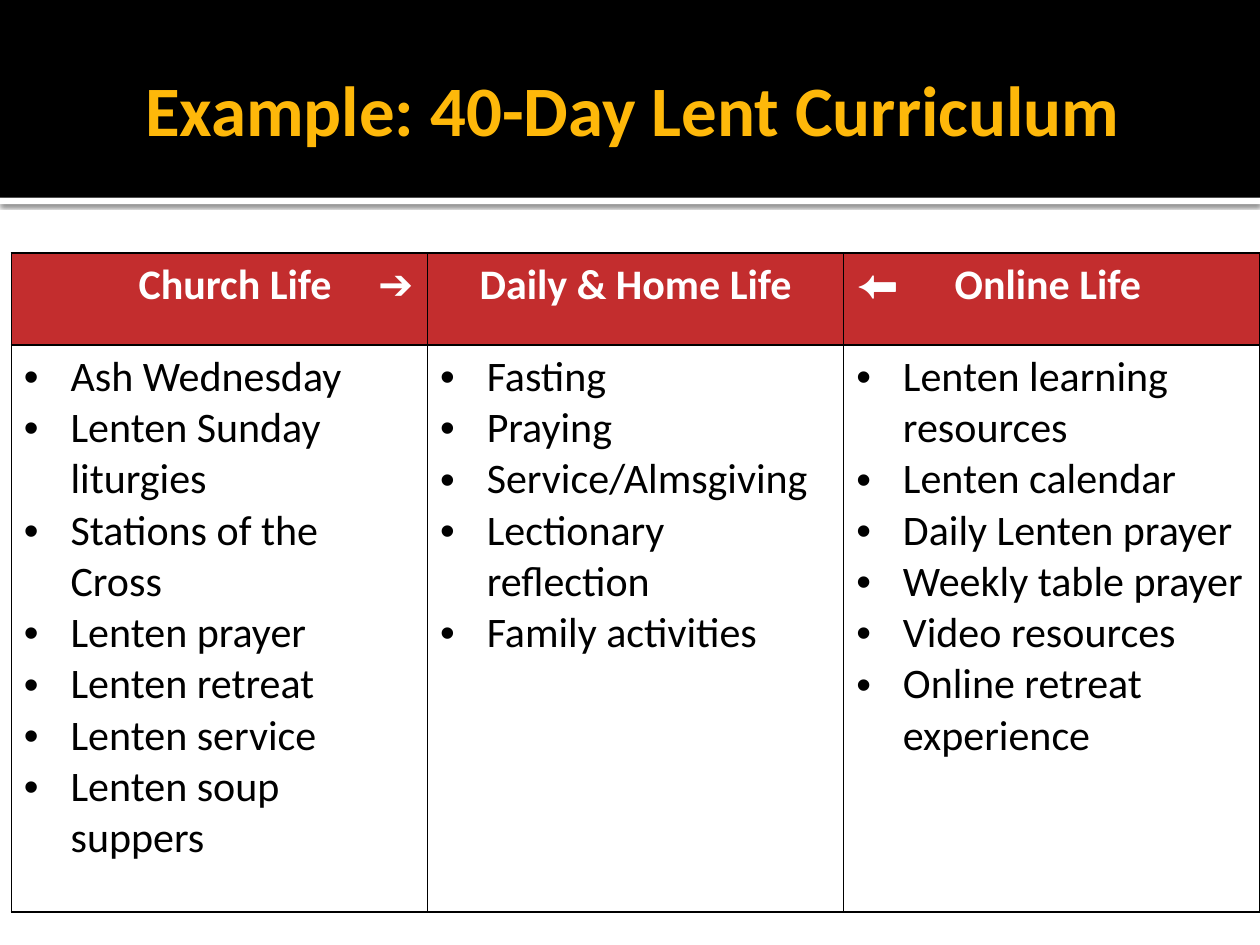
from lxml.etree import SubElement
from pptx import Presentation
from pptx.dml.color import RGBColor
from pptx.enum.shapes import MSO_SHAPE as Shape
from pptx.enum.text import MSO_ANCHOR as Anchor, PP_ALIGN as Align
from pptx.oxml import parse_xml
from pptx.oxml.ns import nsdecls, qn
from pptx.util import Inches, Pt

COLORS = {
    "black": "000000",
    "white": "FFFFFF",
    "gold": "FEB80A",
    "red": "C32D2E",
}
HEADERS = [
    ("\tChurch Life\t➔", Align.LEFT, (0.91, 2.81)),
    ("Daily & Home Life", Align.CENTER, ()),
    ("⬅\tOnline Life", Align.LEFT, (0.78,)),
]
ACTIVITIES = [
    ["Ash Wednesday", "Lenten Sunday liturgies", "Stations of the Cross",
     "Lenten prayer", "Lenten retreat", "Lenten service", "Lenten soup suppers"],
    ["Fasting", "Praying", "Service/Almsgiving", "Lectionary reflection",
     "Family activities"],
    ["Lenten learning resources", "Lenten calendar", "Daily Lenten prayer",
     "Weekly table prayer", "Video resources", "Online retreat experience"],
]


class SlideBuilder:
    font = "Calibri"
    body_size = 24
    title_size = 40.5
    indent = 0.37

    def __init__(self, deck):
        self.slide = deck.slides.add_slide(deck.slide_layouts[5])

    def color(self, name):
        return RGBColor.from_string(COLORS[name])

    def style(self, para, size, color, bold=False):
        font = para.font
        font.name, font.size, font.bold = self.font, Pt(size), bold
        font.color.rgb = self.color(color)

    def bar(self, top, height, color, shadow=False):
        box = self.slide.shapes.add_shape(
            Shape.RECTANGLE, 0, Inches(top), Inches(10), Inches(height))
        box.shadow.inherit = False
        box.fill.solid()
        box.fill.fore_color.rgb = self.color(color)
        box.line.fill.background()
        if shadow:
            effects = box.element.spPr.find(qn("a:effectLst"))
            effects.append(parse_xml(
                f'<a:outerShdw {nsdecls("a")} blurRad="{Pt(2.5)}" '
                f'dist="{Pt(0.8)}" dir="5400000" algn="t" rotWithShape="0">'
                f'<a:srgbClr val="{COLORS["black"]}"><a:alpha val="60000"/>'
                '</a:srgbClr></a:outerShdw>'))

    def title(self, text):
        box = self.slide.shapes.title
        box.left, box.top = Inches(0.5), Inches(0.17)
        box.width, box.height = Inches(9), Inches(1.37)
        frame = box.text_frame
        frame.text = text
        frame.word_wrap = True
        frame.vertical_anchor = Anchor.MIDDLE
        frame.margin_left = Inches(0.1)
        frame.margin_right = frame.margin_top = frame.margin_bottom = Inches(0.05)
        para = frame.paragraphs[0]
        para.alignment = Align.CENTER
        self.style(para, self.title_size, "gold", True)
        self.slide.shapes.element.append(box.element)

    def cell_base(self, cell, color):
        properties = cell._tc.get_or_add_tcPr()
        for side in ("lnL", "lnR", "lnT", "lnB"):
            properties.append(parse_xml(
                f'<a:{side} {nsdecls("a")} w="{Pt(1)}"><a:solidFill>'
                f'<a:srgbClr val="{COLORS["black"]}"/></a:solidFill></a:{side}>'))
        cell.fill.solid()
        cell.fill.fore_color.rgb = self.color(color)

    def header_cell(self, cell, text, alignment, stops):
        self.cell_base(cell, "red")
        cell.text = text
        para = cell.text_frame.paragraphs[0]
        para.alignment = alignment
        if stops:
            tabs = SubElement(para._p.get_or_add_pPr(), qn("a:tabLst"))
            for stop in stops:
                SubElement(tabs, qn("a:tab"), pos=str(Inches(stop)), algn="l")
        self.style(para, self.body_size, "white", True)

    def list_cell(self, cell, items):
        self.cell_base(cell, "white")
        cell.text = "\n".join(items)
        for para in cell.text_frame.paragraphs:
            properties = para._p.get_or_add_pPr()
            properties.set("marL", str(Inches(self.indent)))
            properties.set("indent", str(-Inches(self.indent)))
            SubElement(properties, qn("a:buFont"), typeface="Arial")
            SubElement(properties, qn("a:buChar"), char="•")
            self.style(para, self.body_size, "black")

    def table(self, headers, columns):
        frame = self.slide.shapes.add_table(
            2, len(headers), Inches(0.09), Inches(2.01), Inches(9.91), Inches(5.23))
        grid = frame.table
        for row, height in zip(grid.rows, (0.73, 4.5)):
            row.height = Inches(height)
        for index, (header, items) in enumerate(zip(headers, columns)):
            self.header_cell(grid.cell(0, index), *header)
            self.list_cell(grid.cell(1, index), items)


def main():
    deck = Presentation()
    deck.slide_width, deck.slide_height = Inches(10), Inches(7.5)
    page = SlideBuilder(deck)
    page.bar(1.57, 0.05, "white", shadow=True)
    page.bar(0, 1.57, "black")
    page.title("Example: 40-Day Lent Curriculum")
    page.table(HEADERS, ACTIVITIES)
    deck.save("out.pptx")


if __name__ == "__main__":
    main()
